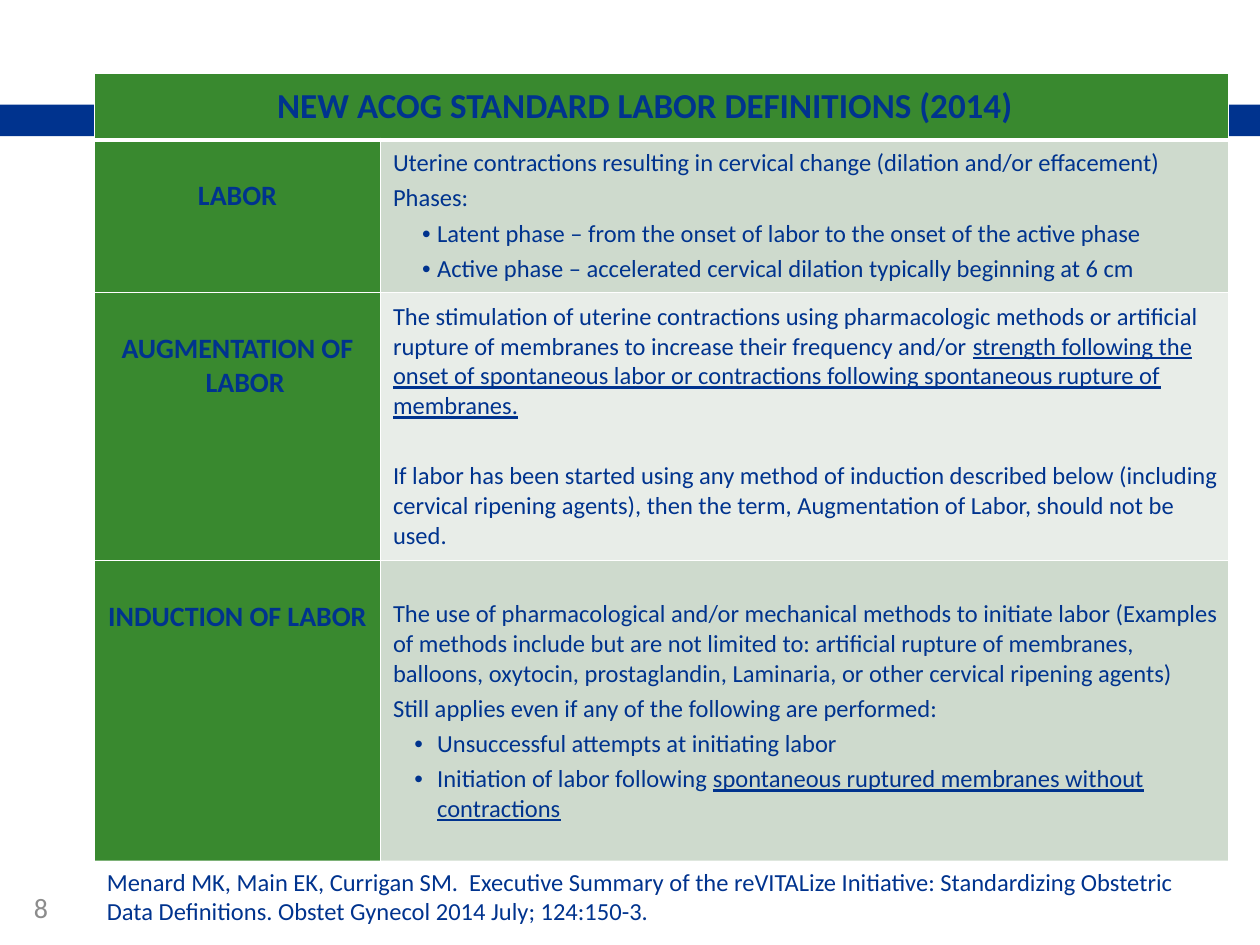
from lxml import etree
from pptx import Presentation
from pptx.dml.color import RGBColor
from pptx.enum.shapes import MSO_SHAPE
from pptx.enum.text import MSO_ANCHOR, MSO_AUTO_SIZE, PP_ALIGN
from pptx.oxml.ns import qn
from pptx.util import Inches, Pt

RECT = MSO_SHAPE.RECTANGLE
TOP, MIDDLE = MSO_ANCHOR.TOP, MSO_ANCHOR.MIDDLE
LEFT, CENTER = PP_ALIGN.LEFT, PP_ALIGN.CENTER
GROW = MSO_AUTO_SIZE.SHAPE_TO_FIT_TEXT

NAVY = RGBColor(0x00, 0x33, 0x8E)
GREEN = RGBColor(0x39, 0x89, 0x2F)
SAGE = RGBColor(0xCE, 0xDA, 0xCD)
MIST = RGBColor(0xE8, 0xED, 0xE8)
GRAY = RGBColor(0x8C, 0x8C, 0x8C)
WHITE = RGBColor(0xFF, 0xFF, 0xFF)

WIDE, HIGH = 10, 7.5
EDGE = 0.75
COLS = (2.27, 6.73)
ROWS = (0.53, 1.21, 2.13, 2.4)

HEAD = {"size": Pt(20), "bold": True}
LABEL = {"size": Pt(16), "bold": True}
BODY = {"size": Pt(14), "bold": False}
PAGE = {"size": Pt(16), "color": GRAY}

# Paragraph kinds: left margin, first-line indent, space before, bullet
PLAIN = (0.03, 0, 3, False)
APART = (0.03, 0, 23, False)
TIGHT = (0.38, -0.12, 3, True)
LOOSE = (0.38, -0.18, 3, True)
HANG = (0.12, -0.12, 3, False)
FLUSH = (0, 0, 0, False)

TITLE = "NEW ACOG STANDARD LABOR DEFINITIONS (2014)"
# Each paragraph: kind, plain text, underlined text
TERMS = [
    ("LABOR", [
        (PLAIN, "Uterine contractions resulting in cervical change "
                "(dilation and/or effacement)", ""),
        (PLAIN, "Phases:", ""),
        (TIGHT, "Latent phase – from the onset of labor to the onset of "
                "the active phase", ""),
        (TIGHT, "Active phase – accelerated cervical dilation typically "
                "beginning at 6 cm", "")]),
    ("AUGMENTATION OF LABOR", [
        (PLAIN, "The stimulation of uterine contractions using pharmacologic "
                "methods or artificial rupture of membranes to increase "
                "their frequency and/or ",
                "strength following the onset of spontaneous labor or "
                "contractions following spontaneous rupture of membranes."),
        (APART, "If labor has been started using any method of induction "
                "described below (including cervical ripening agents), then "
                "the term, Augmentation of Labor, should not be used.", "")]),
    ("INDUCTION OF LABOR", [
        (PLAIN, "The use of pharmacological and/or mechanical methods to "
                "initiate labor (Examples of methods include but are not "
                "limited to: artificial rupture of membranes, balloons, "
                "oxytocin, prostaglandin, Laminaria, or other cervical "
                "ripening agents)", ""),
        (PLAIN, "Still applies even if any of the following are performed:",
                ""),
        (LOOSE, "Unsuccessful attempts at initiating labor", ""),
        (LOOSE, "Initiation of labor following ",
                "spontaneous ruptured membranes without contractions")]),
]
SOURCE = ("Menard MK, Main EK, Currigan SM.  Executive Summary of the "
          "reVITALize Initiative: Standardizing Obstetric Data Definitions. "
          "Obstet Gynecol 2014 July; 124:150-3.")


def style(font, form):
    font.name = "Calibri"
    font.color.rgb = form.get("color", NAVY)
    for key, value in form.items():
        if key != "color":
            setattr(font, key, value)


def write(frame, paras, form, align=LEFT):
    for i, (kind, plain, under) in enumerate(paras):
        para = frame.paragraphs[0] if i == 0 else frame.add_paragraph()
        left, first, gap, dot = kind
        props = para._p.get_or_add_pPr()
        props.set("marL", str(Inches(left)))
        props.set("indent", str(Inches(first)))
        if dot:
            etree.SubElement(props, qn("a:buFont"), typeface="Arial")
            etree.SubElement(props, qn("a:buChar"), char="•")
        para.alignment = align
        para.space_before = Pt(gap if i else 0)
        for text, line in ((plain, False), (under, True)):
            if text:
                run = para.add_run()
                run.text = text
                style(run.font, form)
                run.font.underline = line


def border(cell, top=1, base=1):
    props = cell._tc.get_or_add_tcPr()
    for side, width in (("L", 1), ("R", 1), ("T", top), ("B", base)):
        line = etree.SubElement(props, qn(f"a:ln{side}"), w=str(Pt(width)))
        fill = etree.SubElement(line, qn("a:solidFill"))
        etree.SubElement(fill, qn("a:srgbClr"), val=str(WHITE))


def dress(cell, color, anchor, top=0, right=0.07):
    """Set the fill, anchor and insets of a cell."""
    cell.fill.solid()
    cell.fill.fore_color.rgb = color
    form = {"vertical_anchor": anchor, "margin_left": Inches(0.07),
            "margin_right": Inches(right), "margin_top": Inches(top),
            "margin_bottom": 0}
    for key, value in form.items():
        setattr(cell, key, value)


def add_block(slide, box, color):
    shape = slide.shapes.add_shape(RECT, *map(Inches, box))
    shape.shadow.inherit = False
    shape.fill.solid()
    shape.fill.fore_color.rgb = color
    shape.line.fill.background()
    return shape


def add_terms(slide):
    box = (EDGE, 0.58, sum(COLS), sum(ROWS))
    table = slide.shapes.add_table(len(ROWS), len(COLS),
                                   *map(Inches, box)).table
    table.horz_banding = False
    for col, width in zip(table.columns, COLS):
        col.width = Inches(width)
    for row, height in zip(table.rows, ROWS):
        row.height = Inches(height)
    for r in range(len(ROWS)):
        for c in range(len(COLS)):
            border(table.cell(r, c), 3 if r == 1 else 1, 1 if r else 3)

    head = table.cell(0, 0)
    head.merge(table.cell(0, 1))
    dress(head, GREEN, MIDDLE, right=0.33)
    write(head.text_frame, [(FLUSH, TITLE, "")], HEAD, CENTER)
    for r, (term, paras) in enumerate(TERMS, 1):
        label, body = table.cell(r, 0), table.cell(r, 1)
        dress(label, GREEN, TOP, top=0.31)
        write(label.text_frame, [(HANG, term, "")], LABEL, CENTER)
        dress(body, SAGE if r % 2 else MIST, MIDDLE)
        write(body.text_frame, paras, BODY)


def add_page(slide):
    box = slide.shapes.add_textbox(*map(Inches, (0.17, 7.02, 0.89, 0.4)))
    box.text_frame.word_wrap = True
    write(box.text_frame, [(FLUSH, "8", "")], PAGE)


def add_source(slide):
    shape = add_block(slide, (EDGE, 6.83, sum(COLS), 0.57), WHITE)
    frame = shape.text_frame
    frame.word_wrap = True
    frame.auto_size = GROW
    frame.vertical_anchor = TOP
    write(frame, [(FLUSH, SOURCE, "")], BODY)


def main():
    deck = Presentation()
    deck.slide_width, deck.slide_height = Inches(WIDE), Inches(HIGH)
    slide = deck.slides.add_slide(deck.slide_layouts[6])
    add_block(slide, (0, 0.83, WIDE, 0.25), NAVY)
    add_terms(slide)
    add_page(slide)
    add_source(slide)
    deck.save("out.pptx")


if __name__ == "__main__":
    main()
